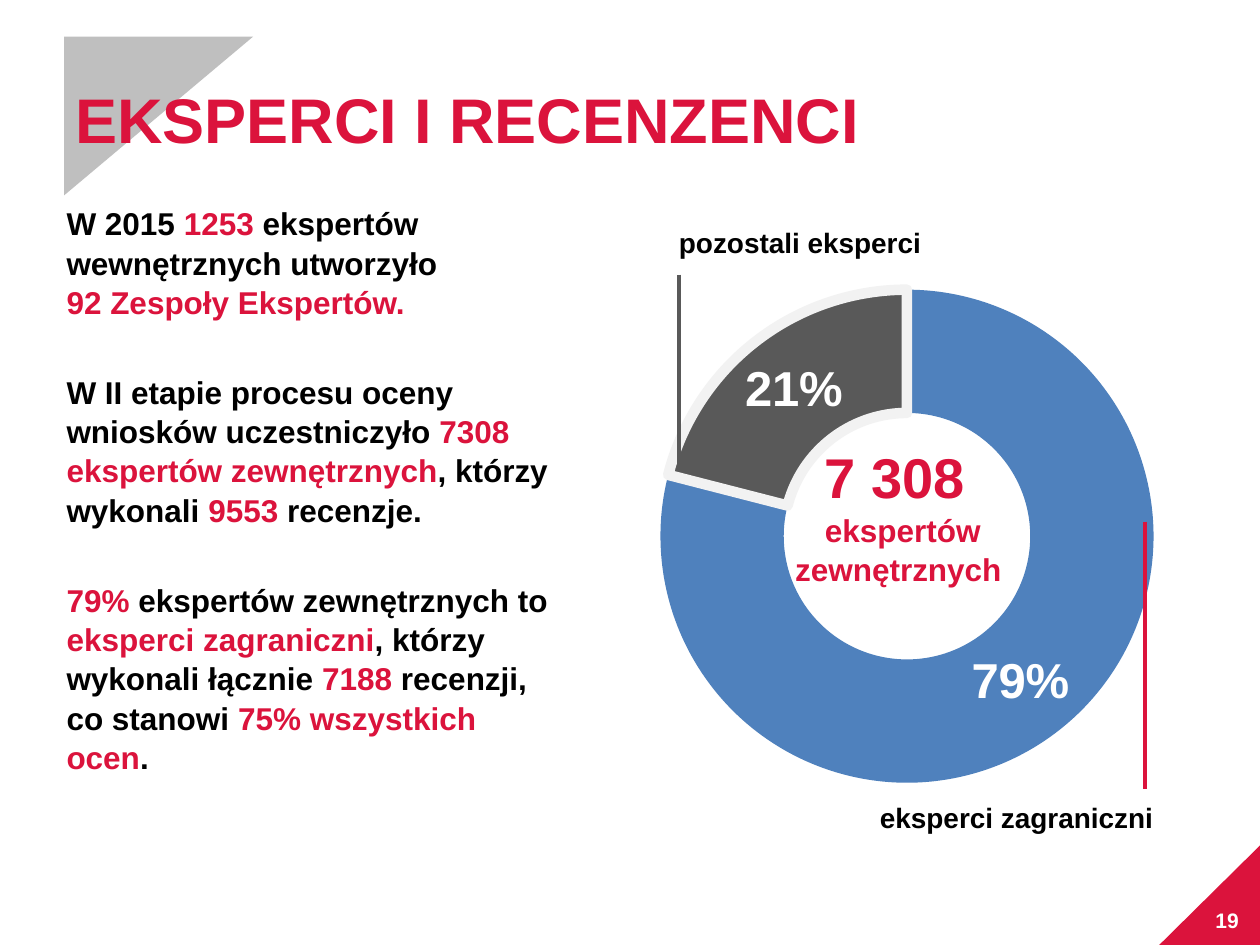
from typing import NamedTuple

from lxml import etree
from pptx import Presentation
from pptx.chart.data import CategoryChartData
from pptx.dml.color import RGBColor
from pptx.enum.chart import XL_CHART_TYPE
from pptx.enum.shapes import MSO_CONNECTOR, MSO_SHAPE
from pptx.enum.text import MSO_ANCHOR, PP_ALIGN
from pptx.oxml.ns import qn
from pptx.util import Inches, Pt

DOUGHNUT = XL_CHART_TYPE.DOUGHNUT
STRAIGHT = MSO_CONNECTOR.STRAIGHT
RIGHT_TRIANGLE = MSO_SHAPE.RIGHT_TRIANGLE
TOP, MIDDLE = MSO_ANCHOR.TOP, MSO_ANCHOR.MIDDLE
LEFT, CENTER, RIGHT = PP_ALIGN.LEFT, PP_ALIGN.CENTER, PP_ALIGN.RIGHT

FONT = "Arial"
CRIMSON, BLACK, WHITE = "DB133C", "000000", "FFFFFF"
SILVER, CHARCOAL, BLUE, PALE = "BFBFBF", "595959", "4F81BD", "F2F2F2"
LINE_SPACING = 1.04
PARAGRAPH_GAP = 29


class Area(NamedTuple):
    left: float
    top: float
    width: float
    height: float

    def emu(self) -> list:
        return [Inches(length) for length in self]


class Span(NamedTuple):
    text: str
    color: str = BLACK
    size: float = 18


class TextBlock(NamedTuple):
    area: Area
    paragraphs: list
    align: int = LEFT
    anchor: int = TOP
    wrap: bool = True


class Corner(NamedTuple):
    area: Area
    rotation: int
    color: str


class Leader(NamedTuple):
    x: float
    top: float
    bottom: float
    color: str


CORNERS = [
    Corner(Area(0.63, 0.17, 1.26, 1.5), 90, SILVER),
    Corner(Area(9.17, 6.7, 0.83, 0.84), 270, CRIMSON),
]

BODY = [
    [Span("W 2015 "), Span("1253 ", CRIMSON),
     Span("ekspertów wewnętrznych utworzyło \n"),
     Span("92 Zespoły Ekspertów.", CRIMSON)],
    [Span("W II etapie procesu oceny wniosków uczestniczyło "),
     Span("7308 ekspertów zewnętrznych", CRIMSON),
     Span(", którzy wykonali "), Span("9553", CRIMSON), Span(" recenzje.")],
    [Span("79% ", CRIMSON), Span("ekspertów zewnętrznych to "),
     Span("eksperci zagraniczni", CRIMSON),
     Span(", którzy wykonali łącznie "), Span("7188", CRIMSON),
     Span(" recenzji, co stanowi "),
     Span("75% wszystkich ocen", CRIMSON), Span(".")],
]

TEXT_BLOCKS = [
    TextBlock(Area(0.5, 0.3, 9, 1.25),
              [[Span("EKSPERCI I RECENZENCI", CRIMSON, 36)]], anchor=MIDDLE),
    TextBlock(Area(7.6, 7.1, 2.33, 0.4),
              [[Span("19", WHITE, 12)]], RIGHT, MIDDLE),
    TextBlock(Area(0.43, 1.56, 4.17, 5.65), BODY),
    TextBlock(Area(6.55, 6.29, 2.7, 0.37),
              [[Span("eksperci zagraniczni", size=16)]], RIGHT),
    TextBlock(Area(5.29, 1.73, 2.21, 0.37),
              [[Span("pozostali eksperci", size=16)]], wrap=False),
    TextBlock(Area(6.18, 3.44, 1.97, 1.25),
              [[Span("7 308 \n", CRIMSON, 32),
                Span("ekspertów zewnętrznych ", CRIMSON)]], CENTER),
]

LEADERS = [
    Leader(9.09, 4.14, 6.26, CRIMSON),
    Leader(5.39, 2.18, 3.71, CHARCOAL),
]


def rgb(color: str) -> RGBColor:
    return RGBColor.from_string(color)


def draw_corner(page, corner: Corner) -> None:
    triangle = page.shapes.add_shape(RIGHT_TRIANGLE, *corner.area.emu())
    triangle.rotation = corner.rotation
    triangle.shadow.inherit = False
    triangle.fill.solid()
    triangle.fill.fore_color.rgb = rgb(corner.color)
    triangle.line.fill.background()


def style_font(font, color: str, size: float) -> None:
    font.name = FONT
    font.size = Pt(size)
    font.bold = True
    font.color.rgb = rgb(color)


def draw_text(page, block: TextBlock) -> None:
    frame = page.shapes.add_textbox(*block.area.emu()).text_frame
    frame.word_wrap = block.wrap
    frame.vertical_anchor = block.anchor
    for index, spans in enumerate(block.paragraphs):
        para = frame.add_paragraph() if index else frame.paragraphs[0]
        para.alignment = block.align
        para.line_spacing = LINE_SPACING
        para.space_before = Pt(PARAGRAPH_GAP if index else 0)
        for span in spans:
            run = para.add_run()
            run.text = span.text.rstrip("\n")
            style_font(run.font, span.color, span.size)
            if span.text.endswith("\n"):
                para.add_line_break()


def place_plot(chart, share: Area) -> None:
    plot_area = chart.element.find(".//" + qn("c:plotArea"))
    for old in plot_area.findall(qn("c:layout")):
        plot_area.remove(old)
    layout = etree.Element(qn("c:layout"))
    manual = etree.SubElement(layout, qn("c:manualLayout"))
    settings = [("layoutTarget", "inner"), ("xMode", "edge"), ("yMode", "edge")]
    settings += zip("xywh", share)
    for tag, setting in settings:
        etree.SubElement(manual, qn("c:" + tag)).set("val", str(setting))
    plot_area.insert(0, layout)


def draw_doughnut(page, area: Area) -> None:
    data = CategoryChartData()
    data.categories = ["1", "2"]
    data.add_series("Series 1", (79, 21))
    chart = page.shapes.add_chart(DOUGHNUT, *area.emu(), data).chart
    chart.has_legend = False
    chart.has_title = False
    chart.font.name = "Calibri"
    chart.font.size = Pt(10)
    chart.font.color.rgb = rgb(BLACK)
    place_plot(chart, Area(0.1, 0.145, 0.812, 0.759))
    plot = chart.plots[0]
    plot.vary_by_categories = True
    plot.has_data_labels = True
    labels = plot.data_labels
    labels.show_value = False
    labels.show_percentage = True
    labels.number_format = "0%"
    labels.number_format_is_linked = False
    style_font(labels.font, WHITE, 28)
    points = plot.series[0].points
    for index, color in enumerate([BLUE, CHARCOAL]):
        fill = points[index].format.fill
        fill.solid()
        fill.fore_color.rgb = rgb(color)
    points[0].format.line.fill.background()
    border = points[1].format.line
    border.color.rgb = rgb(PALE)
    border.width = Pt(6)


def draw_leader(page, leader: Leader) -> None:
    x = Inches(leader.x)
    line = page.shapes.add_connector(
        STRAIGHT, x, Inches(leader.top), x, Inches(leader.bottom))
    line.line.color.rgb = rgb(leader.color)
    line.line.width = Pt(2.25)
    etree.SubElement(line.element.spPr, qn("a:effectLst"))


def main() -> None:
    deck = Presentation()
    deck.slide_width, deck.slide_height = Inches(10), Inches(7.5)
    page = deck.slides.add_slide(deck.slide_layouts[6])
    for corner in CORNERS:
        draw_corner(page, corner)
    draw_doughnut(page, Area(4.76, 1.55, 4.82, 5.16))
    for block in TEXT_BLOCKS:
        draw_text(page, block)
    for leader in LEADERS:
        draw_leader(page, leader)
    deck.save("out.pptx")


if __name__ == "__main__":
    main()
